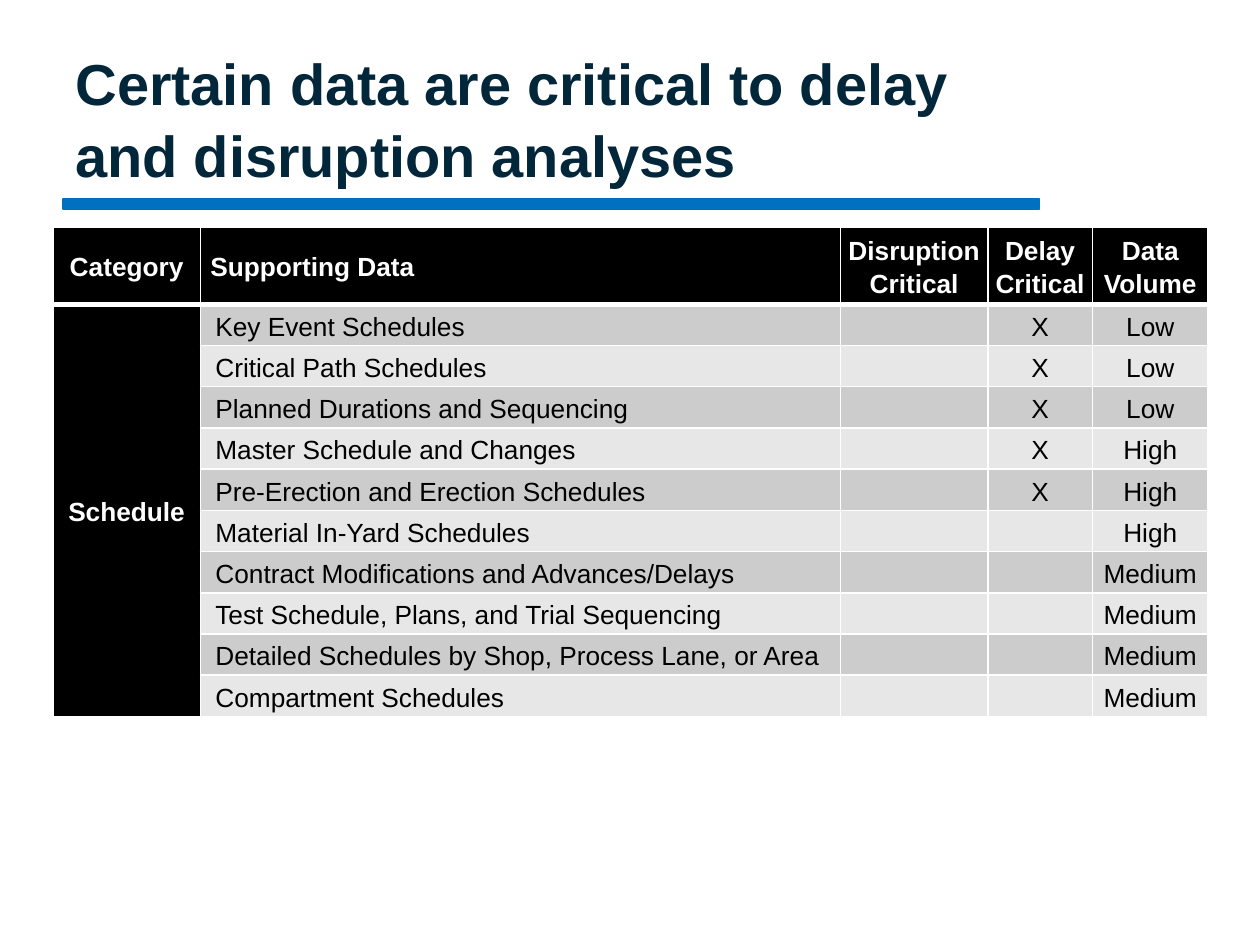
from lxml.etree import SubElement
from pptx import Presentation
from pptx.dml.color import RGBColor
from pptx.enum.shapes import MSO_SHAPE
from pptx.enum.text import MSO_ANCHOR, PP_ALIGN
from pptx.oxml.ns import qn
from pptx.util import Inches, Pt


def rgb(value):
    return RGBColor.from_string(value)


def add_border(cell, side, width):
    ln = SubElement(cell._tc.get_or_add_tcPr(), qn(f"a:ln{side}"), w=str(Pt(width)))
    SubElement(SubElement(ln, qn("a:solidFill")), qn("a:srgbClr"), val="FFFFFF")


prs = Presentation()
prs.slide_width, prs.slide_height = Inches(10), Inches(7.5)
s = prs.slides.add_slide(prs.slide_layouts[6])

# Rule under the title
sp = s.shapes.add_shape(MSO_SHAPE.RECTANGLE, Inches(0.5), Inches(1.58), Inches(7.75), Inches(0.08))
sp.shadow.inherit = False
sp.fill.solid()
sp.fill.fore_color.rgb = rgb("0070C0")
sp.line.color.rgb = rgb("0070C0")
sp.line.width = Pt(0.75)

# Title
tf = s.shapes.add_textbox(Inches(0.5), Inches(0.3), Inches(7.83), Inches(1.25)).text_frame
tf.word_wrap = True
tf.vertical_anchor = MSO_ANCHOR.MIDDLE
p = tf.paragraphs[0]
p.line_spacing = 1.04
r = p.add_run()
r.text = "Certain data are critical to delay and disruption analyses"
for name, value in {"name": "Arial", "size": Pt(33), "bold": True}.items():
    setattr(r.font, name, value)
r.font.color.rgb = rgb("02263A")

# Table content
header = ["Category", "Supporting Data", "Disruption Critical", "Delay Critical", "Data Volume"]
schedules = [
    ("Key Event Schedules", "X", "Low"),
    ("Critical Path Schedules", "X", "Low"),
    ("Planned Durations and Sequencing", "X", "Low"),
    ("Master Schedule and Changes", "X", "High"),
    ("Pre-Erection and Erection Schedules", "X", "High"),
    ("Material In-Yard Schedules", "", "High"),
    ("Contract Modifications and Advances/Delays", "", "Medium"),
    ("Test Schedule, Plans, and Trial Sequencing", "", "Medium"),
    ("Detailed Schedules by Shop, Process Lane, or Area", "", "Medium"),
    ("Compartment Schedules", "", "Medium"),
]
rows = [header]
for i, (data, delay, volume) in enumerate(schedules):
    rows.append(["Schedule" if i == 0 else "", data, "", delay, volume])

# Table grid
widths = [1.17, 5.08, 1.17, 0.83, 0.92]
heights = [0.56] + [0.3] * len(schedules)
table = s.shapes.add_table(len(rows), len(widths), Inches(0.42), Inches(1.8),
                           Inches(sum(widths)), Inches(sum(heights))).table
for column, width in zip(table.columns, widths):
    column.width = Inches(width)
for row, height in zip(table.rows, heights):
    row.height = Inches(height)
table.cell(1, 0).merge(table.cell(len(schedules), 0))

# Table cells
cell_format = {
    "margin_left": Inches(0.01), "margin_right": Inches(0.01),
    "margin_top": Inches(0.02), "margin_bottom": Inches(0.02),
    "vertical_anchor": MSO_ANCHOR.MIDDLE,
}
for i, texts in enumerate(rows):
    for j, text in enumerate(texts):
        cell = table.cell(i, j)
        is_head = i == 0 or j == 0
        for name, value in cell_format.items():
            setattr(cell, name, value)
        for side in "LRTB":
            thick = (i, side) in [(0, "B"), (1, "T")]
            add_border(cell, side, 3 if thick else 1)
        cell.fill.solid()
        cell.fill.fore_color.rgb = rgb("000000" if is_head else "CCCCCC" if i % 2 else "E7E7E7")

        p = cell.text_frame.paragraphs[0]
        if not text:
            SubElement(p._p, qn("a:endParaRPr"), sz="1500")
            continue
        p.line_spacing = 1.15
        if j == 1:
            indent = ("marL", 0.07) if is_head else ("indent", 0.11)
            p._p.get_or_add_pPr().set(indent[0], str(Inches(indent[1])))
        else:
            p.alignment = PP_ALIGN.CENTER
        r = p.add_run()
        r.text = text
        for name, value in {"name": "Arial", "size": Pt(15), "bold": is_head}.items():
            setattr(r.font, name, value)
        r.font.color.rgb = rgb("FFFFFF" if is_head else "000000")

prs.save("out.pptx")
